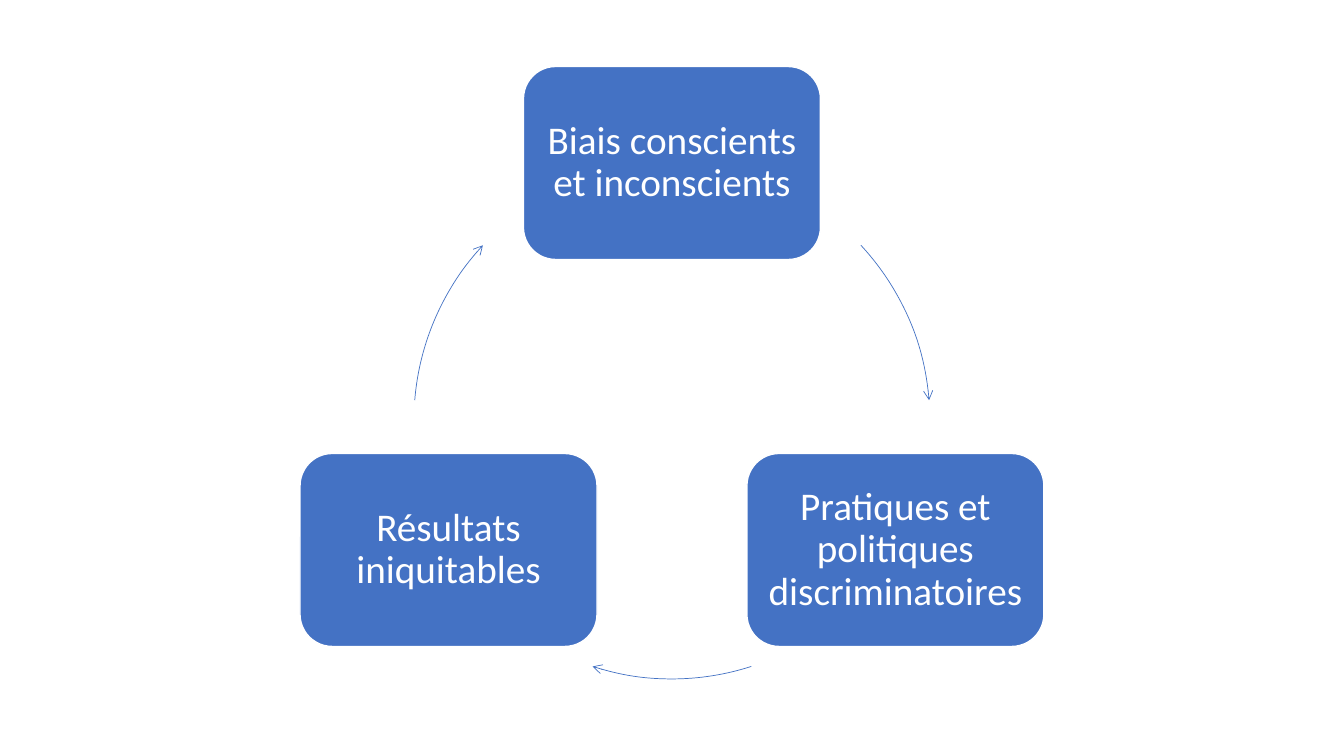
from math import cos, radians, sin

from lxml import etree
from pptx import Presentation
from pptx.dml.color import RGBColor
from pptx.enum.shapes import MSO_SHAPE
from pptx.enum.text import MSO_ANCHOR, PP_ALIGN
from pptx.oxml.ns import qn
from pptx.util import Pt

BOX = MSO_SHAPE.ROUNDED_RECTANGLE
ARC = MSO_SHAPE.ARC
CENTER = PP_ALIGN.CENTER
MIDDLE = MSO_ANCHOR.MIDDLE
SCALE = 12192000 / 1344
BLUE = "4472C4"
WHITE = "FFFFFF"


def px(size):
    return round(size * SCALE)


def color(code):
    return RGBColor.from_string(code)


deck = Presentation()
deck.slide_width, deck.slide_height = px(1344), px(756)
slide = deck.slides.add_slide(deck.slide_layouts[6])

mid_x, mid_y, radius = 672, 421, 258
wide, high = 297, 193
steps = [
    ("Biais conscients et inconscients", -90),
    ("Pratiques et politiques discriminatoires", 30),
    ("Résultats iniquitables", 150),
]
arcs = [(317.1, 355.4), (72.1, 107.9), (184.6, 222.9)]

for (label, angle), ends in zip(steps, arcs):
    left = mid_x + radius * cos(radians(angle)) - wide / 2
    top = mid_y + radius * sin(radians(angle)) - high / 2
    box = slide.shapes.add_shape(BOX, px(left), px(top), px(wide), px(high))
    box.shadow.inherit = False
    box.fill.solid()
    box.fill.fore_color.rgb = color(BLUE)
    box.line.color.rgb = color(WHITE)
    box.line.width = Pt(1)
    frame = box.text_frame
    frame.word_wrap = True
    frame.vertical_anchor = MIDDLE
    for side in ("left", "top", "right", "bottom"):
        setattr(frame, f"margin_{side}", px(11))
    para = frame.paragraphs[0]
    para.alignment = CENTER
    para.line_spacing = 0.9
    run = para.add_run()
    run.text = label
    for name, value in {"name": "Calibri", "size": Pt(28)}.items():
        setattr(run.font, name, value)
    run.font.color.rgb = color(WHITE)

    arc = slide.shapes.add_shape(
        ARC, px(mid_x - radius), px(mid_y - radius), px(2 * radius), px(2 * radius)
    )
    arc.shadow.inherit = False
    arc.fill.background()
    arc.line.color.rgb = color(BLUE)
    arc.line.width = Pt(0.5)
    for index, degree in enumerate(ends):
        arc.adjustments[index] = degree * 0.6
    line = arc.element.spPr.find(qn("a:ln"))
    etree.SubElement(line, qn("a:tailEnd"), type="arrow")

deck.save("out.pptx")
